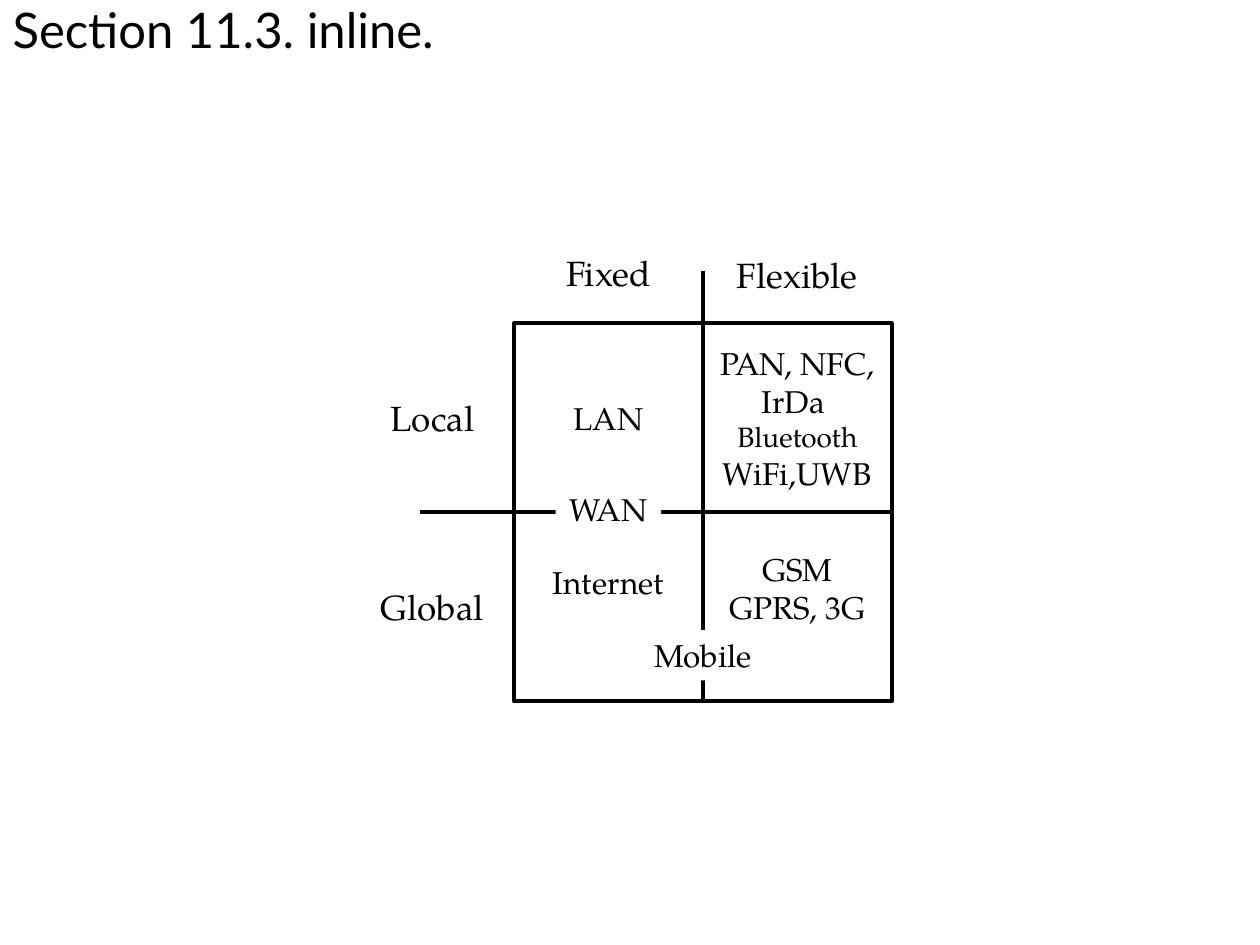
"""Build the slide that sorts networks by reach and by flexibility."""
from lxml import etree
from pptx import Presentation
from pptx.dml.color import RGBColor
from pptx.enum.shapes import MSO_CONNECTOR, MSO_SHAPE
from pptx.enum.text import MSO_ANCHOR, MSO_AUTO_SIZE, PP_ALIGN
from pptx.oxml.ns import qn
from pptx.util import Cm, Pt

STRAIGHT = MSO_CONNECTOR.STRAIGHT
RECTANGLE = MSO_SHAPE.RECTANGLE
TOP, MIDDLE = MSO_ANCHOR.TOP, MSO_ANCHOR.MIDDLE
NO_FIT, GROW = MSO_AUTO_SIZE.NONE, MSO_AUTO_SIZE.SHAPE_TO_FIT_TEXT
LEFT, CENTER = PP_ALIGN.LEFT, PP_ALIGN.CENTER

COLORS = {"ink": "000000", "paper": "FFFFFF"}
CELL = 3.81
GRID_LEFT, GRID_TOP = 10.36, 6.52
MID_X, MID_Y = GRID_LEFT + CELL, GRID_TOP + CELL
RIGHT, BOTTOM = MID_X + CELL, MID_Y + CELL
COLUMNS = [GRID_LEFT + CELL / 2, MID_X + CELL / 2]
ROWS = [GRID_TOP + CELL / 2, MID_Y + CELL / 2]


class NetworkSlide:
    """Holds the style and the current slide."""

    title_font = "Lato"
    label_font = "TeX Gyre Pagella"
    line_width = Pt(2.25)

    def __init__(self, page):
        self.page = page
        self.diagram = page.shapes.add_group_shape()

    def color(self, name):
        return RGBColor.from_string(COLORS[name])

    def format_span(self, span, font, size):
        span.font.name = font
        span.font.size = Pt(size)
        span.font.color.rgb = self.color("ink")

    def fill(self, shape):
        shape.fill.solid()
        shape.fill.fore_color.rgb = self.color("paper")

    def outline(self, shape):
        shape.line.color.rgb = self.color("ink")
        shape.line.width = self.line_width

    def title(self, text):
        box = self.page.shapes.title
        box.left, box.top, box.width, box.height = Cm(0), Cm(0), Cm(25.4), Cm(2.8)
        frame = box.text_frame
        frame.text = text
        frame.vertical_anchor = TOP
        frame.auto_size = NO_FIT
        para = frame.paragraphs[0]
        para.alignment = LEFT
        para.line_spacing = 0.9
        self.format_span(para.runs[0], self.title_font, 28)

    def line(self, x1, y1, x2, y2):
        axis = self.diagram.shapes.add_connector(STRAIGHT, Cm(x1), Cm(y1), Cm(x2), Cm(y2))
        self.outline(axis)
        etree.SubElement(axis.element.spPr, qn("a:effectLst"))

    def cell(self, left, top):
        box = self.diagram.shapes.add_shape(RECTANGLE, Cm(left), Cm(top), Cm(CELL), Cm(CELL))
        box.shadow.inherit = False
        self.fill(box)
        self.outline(box)

    def label(self, text, x, y, width, height=1.02, size=18, filled=False, small=None):
        box = self.diagram.shapes.add_textbox(
            Cm(x - width / 2), Cm(y - height / 2), Cm(width), Cm(height))
        if filled:
            self.fill(box)
        frame = box.text_frame
        frame.word_wrap = False
        frame.auto_size = GROW
        frame.vertical_anchor = MIDDLE
        para = frame.paragraphs[0]
        para.text = text
        para.alignment = CENTER
        for span in para.runs:
            self.format_span(span, self.label_font, 16 if span.text == small else size)


def main():
    deck = Presentation()
    deck.slide_width, deck.slide_height = Cm(25.4), Cm(19.05)
    slide = NetworkSlide(deck.slides.add_slide(deck.slide_layouts[5]))
    slide.title("Section 11.3. inline.")

    slide.line(8.46, MID_Y, RIGHT, MID_Y)
    for top in (MID_Y, GRID_TOP):
        for left in (GRID_LEFT, MID_X):
            slide.cell(left, top)
    slide.line(MID_X, 5.46, MID_X, BOTTOM)

    headings = [
        ("Fixed", COLUMNS[0], 5.49, 2.26),
        ("Flexible", COLUMNS[1], 5.54, 3),
        ("Local", 8.72, ROWS[0], 2.21),
        ("Global", 8.72, ROWS[1], 2.62),
    ]
    for text, x, y, width in headings:
        slide.label(text, x, y, width, height=1.12, size=20)

    slide.label("LAN", COLUMNS[0], ROWS[0], 1.93)
    slide.label("WAN", COLUMNS[0], 10.26, 2.13, filled=True)
    slide.label("Internet", COLUMNS[0], 11.73, 2.77)
    slide.label("Mobile", MID_X, 13.21, 2.51, filled=True)
    slide.label("PAN, NFC,\vIrDa \vBluetooth\vWiFi,UWB", COLUMNS[1], ROWS[0],
                3.71, height=3.25, small="Bluetooth")
    slide.label("GSM\vGPRS, 3G", COLUMNS[1], 11.85, 3.28, height=1.8)
    deck.save("out.pptx")


if __name__ == "__main__":
    main()
